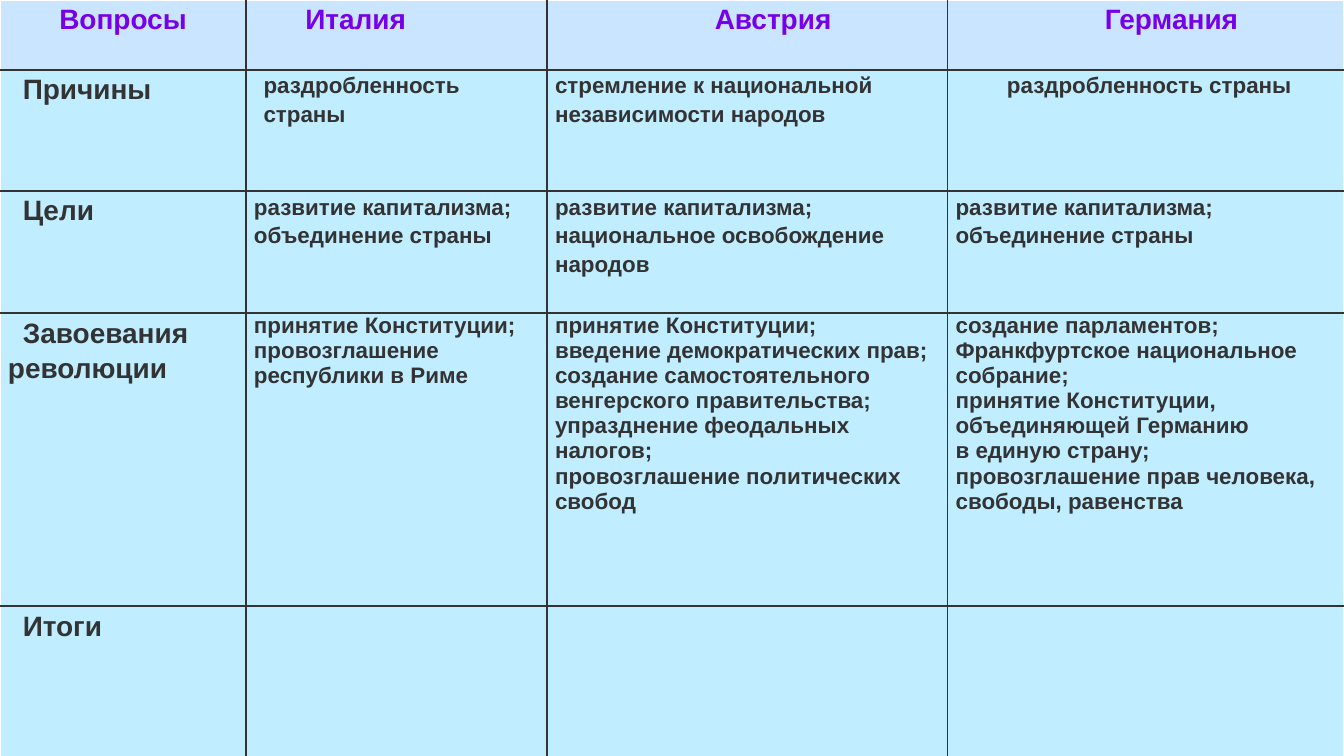
import pptx
import pptx.dml.color
import pptx.enum.text
import pptx.oxml
import pptx.oxml.ns
import pptx.util

Cm = pptx.util.Cm
Pt = pptx.util.Pt
RGB = pptx.dml.color.RGBColor.from_string
CENTER = pptx.enum.text.PP_ALIGN.CENTER

COLORS = {
    "head_fill": "C9E5FF",
    "body_fill": "C0EDFF",
    "head_text": "7700E9",
    "text": "333333",
    "line": "333333",
    "edge": "FFFFFF",
}
COL_WIDTHS = [4.65, 5.69, 7.57, 7.49]
ROW_HEIGHTS = [1.32, 2.29, 2.31, 5.54, 3.45]
COUNTRY_INDENT = 0.97
LABEL_INDENT = 0.28

ROWS = [
    [["Вопросы"], ["Италия"], ["Австрия"], ["Германия"]],
    [
        ["Причины"],
        ["раздробленность страны"],
        ["стремление к национальной независимости народов"],
        ["раздробленность страны"],
    ],
    [
        ["Цели"],
        ["развитие капитализма;", "объединение страны"],
        ["развитие капитализма;", "национальное освобождение народов"],
        ["развитие капитализма;", "объединение страны"],
    ],
    [
        ["Завоевания революции"],
        ["принятие Конституции;", "провозглашение", "республики в Риме"],
        [
            "принятие Конституции;",
            "введение демократических прав;",
            "создание самостоятельного венгерского правительства;",
            "упразднение феодальных налогов;",
            "провозглашение политических свобод",
        ],
        [
            "создание парламентов;",
            "Франкфуртское национальное собрание;",
            "принятие Конституции, объединяющей Германию\vв единую страну;",
            "провозглашение прав человека, свободы, равенства",
        ],
    ],
    [["Итоги"], [], [], []],
]
LEFT_MARGINS = {
    (0, 1): COUNTRY_INDENT,
    (0, 2): COUNTRY_INDENT,
    (0, 3): COUNTRY_INDENT,
    (1, 1): 0.18,
    (1, 3): COUNTRY_INDENT,
}
CENTERED = {(0, 0), (0, 2), (0, 3)}


def set_attrs(obj, values):
    for name, value in values.items():
        setattr(obj, name, value)


def add_borders(cell, row, col):
    outer = {
        "lnL": col == 0,
        "lnR": col == len(COL_WIDTHS) - 1,
        "lnT": row == 0,
        "lnB": row == len(ROW_HEIGHTS) - 1,
    }
    tcPr = cell._tc.get_or_add_tcPr()
    for tag, is_edge in outer.items():
        color = COLORS["edge" if is_edge else "line"]
        tcPr.append(pptx.oxml.parse_xml(
            f'<a:{tag} {pptx.oxml.ns.nsdecls("a")} w="{Pt(1)}">'
            f'<a:solidFill><a:srgbClr val="{color}"/></a:solidFill></a:{tag}>'
        ))


def fill_text(cell, row, col, lines):
    set_attrs(cell, {
        "margin_left": Cm(0.15), "margin_right": Cm(0.15),
        "margin_top": 0, "margin_bottom": 0,
    })
    is_label = row == 0 or col == 0
    font = {"name": "Arial", "size": Pt(15 if is_label else 12), "bold": True}
    color = RGB(COLORS["head_text" if row == 0 else "text"])
    tf = cell.text_frame
    for i, line in enumerate(lines):
        p = tf.paragraphs[0] if i == 0 else tf.add_paragraph()
        p.text = line
        p.line_spacing = 1.0 if row == 3 and col > 0 else 1.15
        if (row, col) in CENTERED:
            p.alignment = CENTER
        pPr = p._p.get_or_add_pPr()
        pPr.set("marL", str(Cm(LEFT_MARGINS.get((row, col), 0))))
        pPr.set("indent", str(Cm(LABEL_INDENT if row > 0 and col == 0 else 0)))
        for r in p.runs:
            set_attrs(r.font, font)
            r.font.color.rgb = color


def add_comparison_table(s, left, top, width, height):
    table = s.shapes.add_table(
        len(ROWS), len(COL_WIDTHS), left, top, width, height
    ).table
    set_attrs(table, {"first_row": False, "horz_banding": False})
    for column, size in zip(table.columns, COL_WIDTHS):
        column.width = int(width * size / sum(COL_WIDTHS))
    for table_row, size in zip(table.rows, ROW_HEIGHTS):
        table_row.height = int(height * size / sum(ROW_HEIGHTS))
    for row, cells in enumerate(ROWS):
        for col, lines in enumerate(cells):
            cell = table.cell(row, col)
            add_borders(cell, row, col)
            cell.fill.solid()
            cell.fill.fore_color.rgb = RGB(
                COLORS["head_fill" if row == 0 else "body_fill"]
            )
            fill_text(cell, row, col, lines)


def main():
    prs = pptx.Presentation()
    set_attrs(prs, {"slide_width": Cm(25.4), "slide_height": Cm(14.29)})
    s = prs.slides.add_slide(prs.slide_layouts[6])
    add_comparison_table(
        s, 0, 0, Cm(sum(COL_WIDTHS)), Cm(sum(ROW_HEIGHTS))
    )
    prs.save("out.pptx")


if __name__ == "__main__":
    main()
